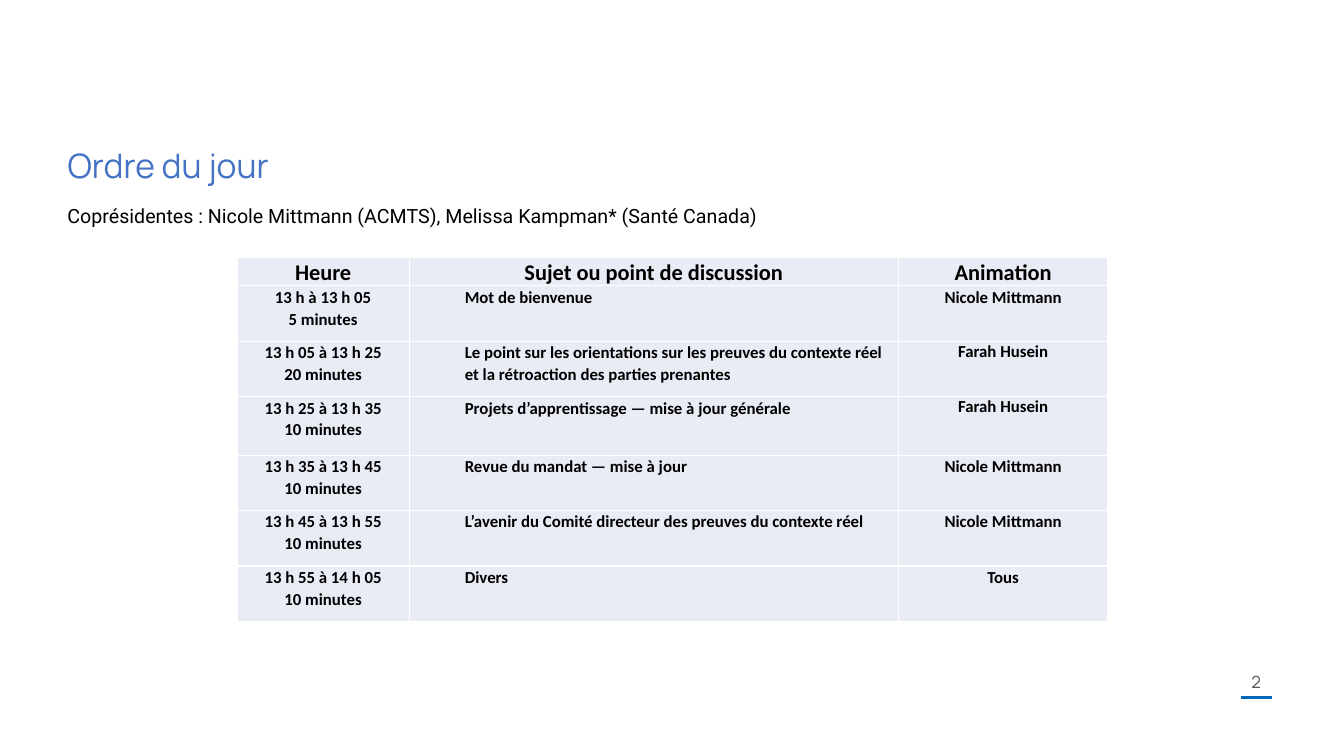
import pptx
import pptx.util
import pptx.dml.color
import pptx.enum.shapes
import pptx.enum.text
import pptx.oxml
import pptx.oxml.ns
import lxml.etree

TITLE = "Ordre du jour"
CHAIRS = "Coprésidentes : Nicole Mittmann (ACMTS), Melissa Kampman* (Santé Canada)"
PAGE = "2"
HEADER = ("Heure", "Sujet ou point de discussion", "Animation")
AGENDA = [
    ("13 h à 13 h 05", "5 minutes", "Mot de bienvenue", "Nicole Mittmann"),
    ("13 h 05 à 13 h 25", "20 minutes",
     "Le point sur les orientations sur les preuves du contexte réel "
     "et la rétroaction des parties prenantes", "Farah Husein"),
    ("13 h 25 à 13 h 35", "10 minutes",
     "Projets d’apprentissage — mise à jour générale", "Farah Husein"),
    ("13 h 35 à 13 h 45", "10 minutes", "Revue du mandat — mise à jour", "Nicole Mittmann"),
    ("13 h 45 à 13 h 55", "10 minutes",
     "L’avenir du Comité directeur des preuves du contexte réel", "Nicole Mittmann"),
    ("13 h 55 à 14 h 05", "10 minutes", "Divers", "Tous"),
]
COL_WIDTHS = (1.71, 4.85, 2.08)
ROW_HEIGHTS = (0.28, 0.55, 0.55, 0.58, 0.55, 0.55, 0.55)
COLORS = {"title": "4472C4", "text": "000000", "page": "545454",
          "rule": "0067B9", "cell": "E9EBF5", "border": "FFFFFF"}

Inches = pptx.util.Inches
Pt = pptx.util.Pt
LEFT = pptx.enum.text.PP_ALIGN.LEFT
CENTER = pptx.enum.text.PP_ALIGN.CENTER
TOP = pptx.enum.text.MSO_ANCHOR.TOP
MIDDLE = pptx.enum.text.MSO_ANCHOR.MIDDLE
qn = pptx.oxml.ns.qn


def rgb(name):
    return pptx.dml.color.RGBColor.from_string(COLORS[name])


def write(tf, *lines, font="Calibri", size=12, color="text", bold=False,
          align=LEFT, spacing=None, after=0, indent=None, anchor=TOP, wrap=True):
    tf.word_wrap = wrap
    tf.vertical_anchor = anchor
    for i, line in enumerate(lines):
        p = tf.paragraphs[0] if i == 0 else tf.add_paragraph()
        p.alignment = align
        if spacing:
            p.line_spacing = spacing
        p.space_before = Pt(0)
        p.space_after = Pt(after if i == len(lines) - 1 else 0)
        if indent:
            p.level = 1
            pPr = p._p.get_or_add_pPr()
            pPr.set("marL", str(Inches(indent)))
            pPr.set("indent", "0")
        r = p.add_run()
        r.text = line
        r.font.name = font
        r.font.size = Pt(size)
        r.font.bold = bold
        r.font.color.rgb = rgb(color)


def add_borders(cell):
    tcPr = cell._tc.get_or_add_tcPr()
    for i, side in enumerate(("lnL", "lnR", "lnT", "lnB")):
        ln = lxml.etree.Element(qn("a:" + side), w=str(Pt(1)))
        fill = lxml.etree.SubElement(ln, qn("a:solidFill"))
        lxml.etree.SubElement(fill, qn("a:srgbClr"), val=COLORS["border"])
        tcPr.insert(i, ln)


def fill_cell(cell, *lines, **fmt):
    cell.margin_left = cell.margin_right = Inches(0.05)
    cell.margin_top = cell.margin_bottom = 0
    cell.fill.solid()
    cell.fill.fore_color.rgb = rgb("cell")
    add_borders(cell)
    write(cell.text_frame, *lines, bold=True, **fmt)


def add_agenda(s):
    frame = s.shapes.add_table(len(ROW_HEIGHTS), len(COL_WIDTHS), Inches(2.35), Inches(2.55),
                               Inches(sum(COL_WIDTHS)), Inches(sum(ROW_HEIGHTS)))
    table = frame.table
    table.horz_banding = False
    for col, width in zip(table.columns, COL_WIDTHS):
        col.width = Inches(width)
    for row, height in zip(table.rows, ROW_HEIGHTS):
        row.height = Inches(height)
    spaced = {"spacing": 1.07, "after": 8}
    for c, label in enumerate(HEADER):
        fill_cell(table.cell(0, c), label, size=16, align=CENTER, **spaced)
    for i, (time, length, topic, host) in enumerate(AGENDA, 1):
        fill_cell(table.cell(i, 0), time, length, align=CENTER, **spaced)
        fill_cell(table.cell(i, 1), topic, indent=0.5, **spaced)
        host_format = {} if host == "Farah Husein" else spaced
        fill_cell(table.cell(i, 2), host, align=CENTER, **host_format)


def main():
    prs = pptx.Presentation()
    prs.slide_width, prs.slide_height = Inches(13.33), Inches(7.5)
    s = prs.slides.add_slide(prs.slide_layouts[5])

    rule = s.shapes.add_connector(pptx.enum.shapes.MSO_CONNECTOR.STRAIGHT,
                                  Inches(12.31), Inches(6.92), Inches(12.62), Inches(6.92))
    rule.line.color.rgb = rgb("rule")
    rule.line.width = Pt(2.25)
    lxml.etree.SubElement(rule._element.spPr, qn("a:effectLst"))

    title = s.shapes.title
    title.left, title.top = Inches(0.57), Inches(1.39)
    title.width, title.height = Inches(9.64), Inches(0.96)
    write(title.text_frame, TITLE, font="Manrope", size=24, color="title")

    page = s.shapes.add_textbox(Inches(12.21), Inches(6.63), Inches(0.5), Inches(0.26))
    write(page.text_frame, PAGE, font="Manrope", color="page", align=CENTER, anchor=MIDDLE)

    add_agenda(s)

    chairs = s.shapes.add_textbox(Inches(0.57), Inches(1.97), Inches(7.11), Inches(0.57))
    write(chairs.text_frame, CHAIRS, font="Roboto", size=14, wrap=False)

    prs.save("out.pptx")


if __name__ == "__main__":
    main()
